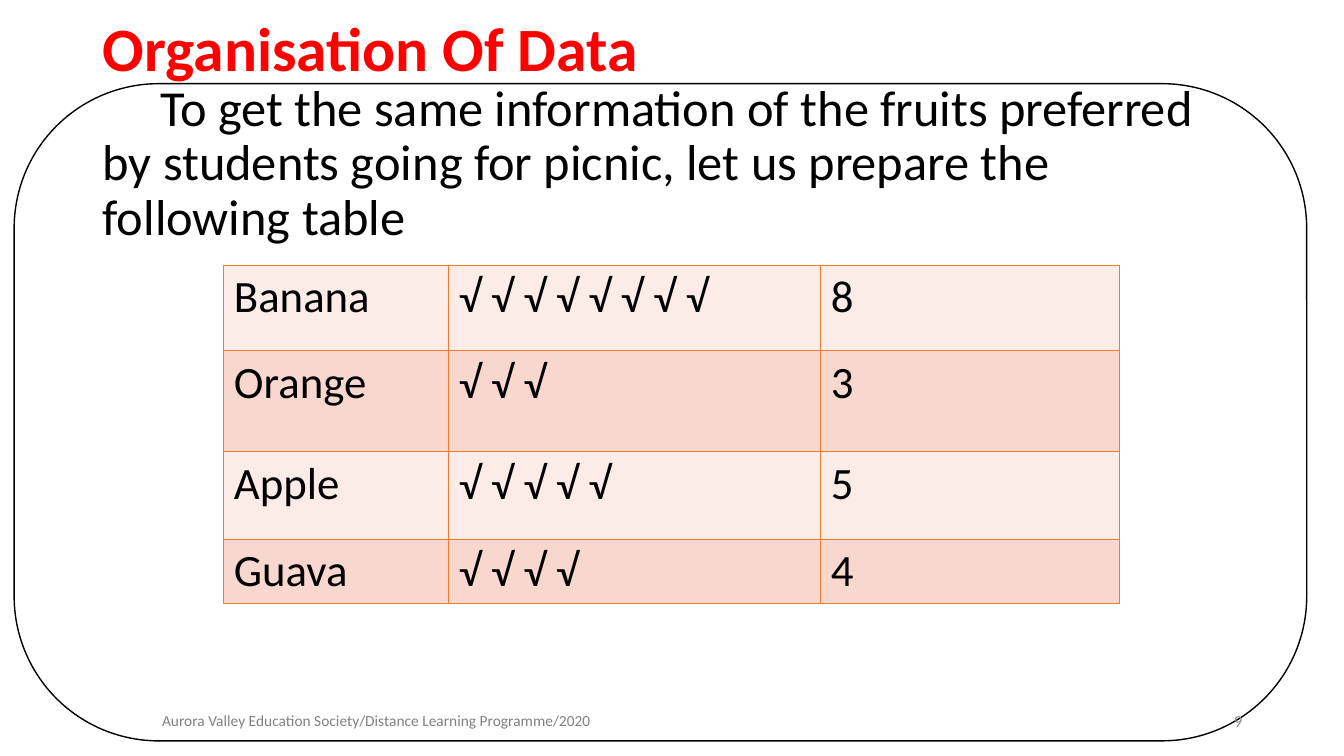
"""Build the slide that tallies the fruits chosen for a picnic."""
from dataclasses import dataclass
from typing import Any

from lxml.etree import SubElement
from pptx import Presentation
from pptx.dml.color import RGBColor
from pptx.enum.shapes import MSO_SHAPE
from pptx.enum.text import MSO_ANCHOR, PP_ALIGN
from pptx.oxml.ns import qn
from pptx.util import Emu, Pt

SCALE = 9144
MARK = "√"


@dataclass(frozen=True)
class Theme:
    face: str = "Calibri"
    paper: str = "FFFFFF"
    ink: str = "000000"
    title: str = "FF0000"
    foot: str = "808080"
    page: str = "8C8C8C"
    edge: str = "ED7D31"
    bands: tuple[str, str] = ("FCECE8", "F8D7CE")
    head_pt: int = 44
    body_pt: int = 36
    cell_pt: int = 32
    page_pt: int = 12
    foot_pt: int = 11
    line_pt: int = 1


@dataclass(frozen=True)
class Label:
    text: str
    box: tuple[int, int, int, int]
    size: int
    color: str
    form: dict[str, Any]
    anchor: MSO_ANCHOR = MSO_ANCHOR.MIDDLE
    bold: bool = False
    indent: int = 0


@dataclass(frozen=True)
class Fruit:
    name: str
    count: int
    height: int


THEME = Theme()
FRAME = (14, 83, 1282, 652)
GRID = (222, 263)
COLS = (223, 369, 296)
FRUITS = (
    Fruit("Banana", 8, 85),
    Fruit("Orange", 3, 100),
    Fruit("Apple", 5, 87),
    Fruit("Guava", 4, 64),
)
LABELS = (
    Label("Organisation Of Data", (92, 0, 1150, 103), THEME.head_pt, THEME.title,
          {"line_spacing": 0.9}, bold=True),
    Label("To get the same information of the fruits preferred by students "
          "going for picnic, let us prepare the following table",
          (92, 77, 1150, 598), THEME.body_pt, THEME.ink,
          {"line_spacing": 0.9, "space_before": Pt(10)}, MSO_ANCHOR.TOP, indent=57),
    Label("Aurora Valley Education Society/Distance Learning Programme/2020",
          (92, 695, 563, 40), THEME.foot_pt, THEME.foot,
          {"alignment": PP_ALIGN.CENTER}),
    Label("9", (942, 695, 300, 40), THEME.page_pt, THEME.page,
          {"alignment": PP_ALIGN.RIGHT}),
)


def px(size: int) -> Emu:
    """Turn px into EMU."""
    return Emu(size * SCALE)


def style(item: Any, form: dict[str, Any]) -> None:
    """Set each format value on the item."""
    for name, value in form.items():
        setattr(item, name, value)


def write(para: Any, text: str, size: int, color: str, bold: bool = False) -> None:
    """Add one styled run to the paragraph."""
    run = para.add_run()
    run.text = text
    style(run.font, {"name": THEME.face, "size": Pt(size), "bold": bold})
    run.font.color.rgb = RGBColor.from_string(color)


def paint(fill: Any, color: str) -> None:
    """Give a solid fill."""
    fill.solid()
    fill.fore_color.rgb = RGBColor.from_string(color)


def draw_frame(slide: Any) -> None:
    """Draw the rounded frame."""
    shape = slide.shapes.add_shape(MSO_SHAPE.ROUNDED_RECTANGLE, *map(px, FRAME))
    shape.adjustments[0] = 0.22
    shape.shadow.inherit = False
    paint(shape.fill, THEME.paper)
    paint(shape.line.fill, THEME.ink)
    shape.line.width = Pt(THEME.line_pt)


def draw_label(slide: Any, label: Label) -> None:
    """Draw one text box."""
    frame = slide.shapes.add_textbox(*map(px, label.box)).text_frame
    style(frame, {"word_wrap": True, "vertical_anchor": label.anchor})
    para = frame.paragraphs[0]
    style(para, label.form)
    if label.indent:
        para._p.get_or_add_pPr().set("indent", str(px(label.indent)))
    write(para, label.text, label.size, label.color, label.bold)


def draw_edges(cell: Any) -> None:
    """Put a line on all four sides of the cell."""
    props = cell._tc.get_or_add_tcPr()
    for side in ("a:lnL", "a:lnR", "a:lnT", "a:lnB"):
        line = SubElement(props, qn(side), w=str(Pt(THEME.line_pt)))
        SubElement(SubElement(line, qn("a:solidFill")), qn("a:srgbClr"), val=THEME.edge)


def draw_table(slide: Any) -> None:
    """Draw the tally table."""
    size = (sum(COLS), sum(fruit.height for fruit in FRUITS))
    table = slide.shapes.add_table(
        len(FRUITS), len(COLS), *map(px, GRID + size)).table
    style(table, {"first_row": False, "horz_banding": False})
    for col, width in zip(table.columns, COLS):
        col.width = px(width)
    for num, (row, fruit) in enumerate(zip(table.rows, FRUITS)):
        row.height = px(fruit.height)
        texts = (fruit.name, " ".join(MARK * fruit.count), str(fruit.count))
        for cell, text in zip(row.cells, texts):
            draw_edges(cell)
            paint(cell.fill, THEME.bands[num % 2])
            write(cell.text_frame.paragraphs[0], text, THEME.cell_pt, THEME.ink)


def main() -> None:
    """Build and save the deck."""
    deck = Presentation()
    style(deck, {"slide_width": px(1333), "slide_height": px(750)})
    slide = deck.slides.add_slide(deck.slide_layouts[6])
    draw_frame(slide)
    for label in LABELS:
        draw_label(slide, label)
    draw_table(slide)
    deck.save("out.pptx")


if __name__ == "__main__":
    main()
